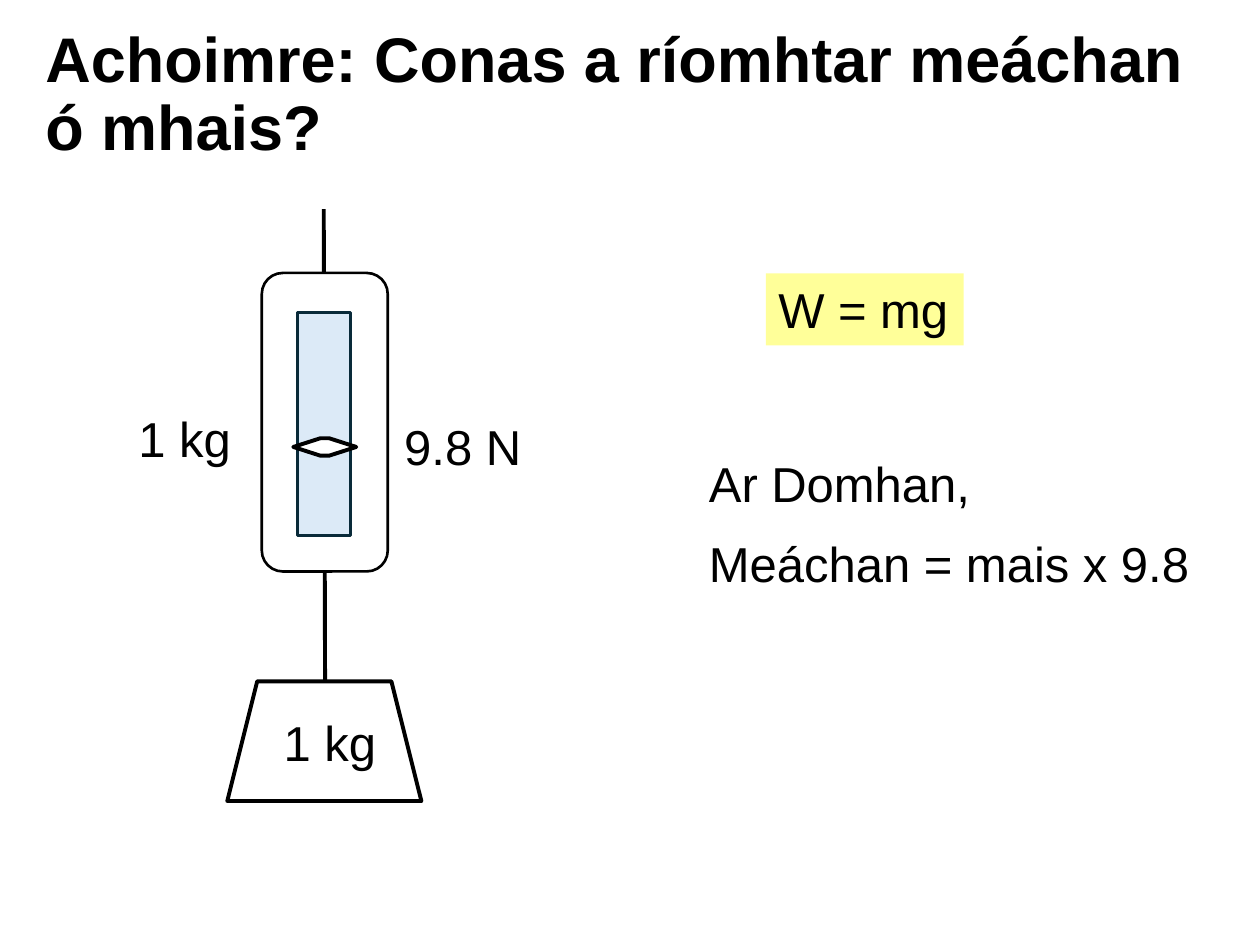
from pptx import Presentation
from pptx.dml.color import RGBColor
from pptx.enum.shapes import MSO_CONNECTOR as Connector, MSO_SHAPE as Shape
from pptx.enum.text import MSO_ANCHOR as Anchor, MSO_AUTO_SIZE as AutoSize, PP_ALIGN as Align
from pptx.oxml.xmlchemy import OxmlElement
from pptx.util import Pt

BLACK = "000000"
WHITE = "FFFFFF"
WINDOW_BLUE = "DCEAF7"
WINDOW_EDGE = "092A39"
FORMULA_YELLOW = "FFFF99"


def colour(hex_value):
    return RGBColor.from_string(hex_value)


def points(*values):
    return [Pt(value) for value in values]


def add_words(paragraph, words, size, bold=False):
    run = paragraph.add_run()
    run.text = words
    run.font.name = "Arial"
    run.font.size = Pt(size)
    run.font.bold = bold
    run.font.color.rgb = colour(BLACK)


def add_title(slide, words):
    title = slide.shapes.title
    title.left, title.top, title.width, title.height = points(18.7, 12.2, 686.9, 85.7)
    frame = title.text_frame
    frame.word_wrap = True
    frame.auto_size = AutoSize.NONE
    frame.vertical_anchor = Anchor.MIDDLE
    paragraph = frame.paragraphs[0]
    paragraph.alignment = Align.LEFT
    paragraph.line_spacing = 0.9
    paragraph.space_before = Pt(0)
    add_words(paragraph, words, 36, bold=True)


def add_rope(slide, start, end):
    rope = slide.shapes.add_connector(Connector.STRAIGHT, *points(*start, *end))
    rope.line.color.rgb = colour(BLACK)
    rope.line.width = Pt(2.25)
    rope._element.spPr.append(OxmlElement("a:effectLst"))


def add_part(slide, kind, box, fill=WHITE, edge=BLACK, edge_width=2.25):
    part = slide.shapes.add_shape(kind, *points(*box))
    part.shadow.inherit = False
    part.fill.solid()
    part.fill.fore_color.rgb = colour(fill)
    part.line.color.rgb = colour(edge)
    part.line.width = Pt(edge_width)
    return part


def add_label(slide, box, lines, fill=None):
    label = slide.shapes.add_textbox(*points(*box))
    if fill:
        label.fill.solid()
        label.fill.fore_color.rgb = colour(fill)
    frame = label.text_frame
    frame.word_wrap = False
    frame.auto_size = AutoSize.SHAPE_TO_FIT_TEXT
    for index, words in enumerate(lines):
        paragraph = frame.add_paragraph() if index else frame.paragraphs[0]
        paragraph.space_after = Pt(12)
        add_words(paragraph, words, 28)


def add_spring_balance(slide):
    add_rope(slide, (185.8, 398), (185, 119.5))
    add_part(slide, Shape.ROUNDED_RECTANGLE, (149.6, 156, 72, 170.6), edge_width=1.5)
    add_part(slide, Shape.RECTANGLE, (169.9, 178.5, 30.5, 127.5),
             WINDOW_BLUE, WINDOW_EDGE, 1.5)
    pointer = add_part(slide, Shape.HEXAGON, (167.6, 250.4, 36, 10))
    pointer.adjustments[0] = 1.55
    add_part(slide, Shape.TRAPEZOID, (129.9, 389.3, 110.9, 68.4))


def main():
    deck = Presentation()
    deck.slide_width, deck.slide_height = points(720, 540)
    slide = deck.slides.add_slide(deck.slide_layouts[5])
    add_title(slide, "Achoimre: Conas a ríomhtar meáchan ó mhais?")
    add_spring_balance(slide)
    add_label(slide, (223.9, 234.7, 82, 41.2), ["9.8 N"])
    for left, top in ((72, 229.7), (155, 403.4)):
        add_label(slide, (left, top, 68.1, 41.2), ["1 kg"])
    add_label(slide, (437.7, 156.2, 113, 41.2), ["W = mg"], FORMULA_YELLOW)
    add_label(slide, (398, 255.8, 292, 87), ["Ar Domhan,", "Meáchan = mais x 9.8"])
    deck.save("out.pptx")


if __name__ == "__main__":
    main()
